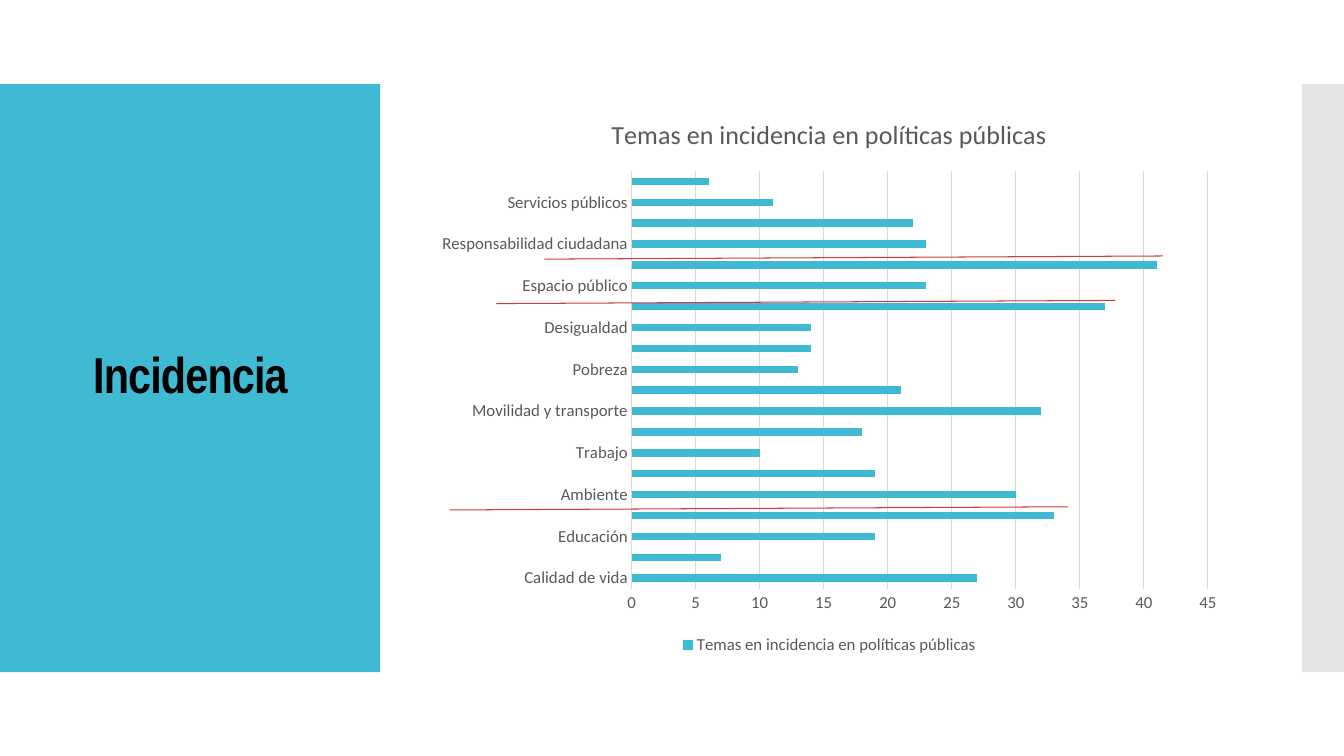
from lxml.etree import SubElement
from pptx import Presentation
from pptx.chart.data import CategoryChartData
from pptx.dml.color import RGBColor
from pptx.enum.chart import XL_CHART_TYPE, XL_LEGEND_POSITION, XL_TICK_MARK
from pptx.enum.shapes import MSO_CONNECTOR, MSO_SHAPE
from pptx.enum.text import MSO_ANCHOR, MSO_AUTO_SIZE, PP_ALIGN
from pptx.oxml.ns import qn
from pptx.util import Cm, Pt

COLORS = {
    "teal": "40BAD2",
    "side": "C8C8C8",
    "black": "000000",
    "label": "595959",
    "grid": "D9D9D9",
    "mark": "D5393D",
}
CHART_TITLE = "Temas en incidencia en políticas públicas"
TOPIC_PAIRS = [
    ("Calidad de vida", 27, 7),
    ("Educación", 19, 33),
    ("Ambiente", 30, 19),
    ("Trabajo", 10, 18),
    ("Movilidad y transporte", 32, 21),
    ("Pobreza", 13, 14),
    ("Desigualdad", 14, 37),
    ("Espacio público", 23, 41),
    ("Responsabilidad ciudadana", 23, 22),
    ("Servicios públicos", 11, 6),
]
MARK_STARTS = [(13.72, 6.53), (12.51, 7.65), (11.33, 12.85)]
MARK_WIDTH = 15.59
MARK_RISE = 0.08


def color(name):
    return RGBColor.from_string(COLORS[name])


def style_font(font, size, color_name, name="Calibri", bold=False):
    font.size = Pt(size)
    font.name = name
    font.bold = bold
    font.color.rgb = color(color_name)


def style_line(line, color_name):
    line.color.rgb = color(color_name)
    line.width = Pt(0.75)


def add_band(slide, left, width, color_name, opacity=100):
    band = slide.shapes.add_shape(
        MSO_SHAPE.RECTANGLE, Cm(left), Cm(2.12), Cm(width), Cm(14.82)
    )
    band.shadow.inherit = False
    band.fill.solid()
    band.fill.fore_color.rgb = color(color_name)
    band.line.fill.background()
    if opacity < 100:
        fill_color = band.element.spPr.find(qn("a:solidFill"))[0]
        SubElement(fill_color, qn("a:alpha"), val=str(opacity * 1000))
    slide.shapes.title.element.addprevious(band.element)


def format_title(title, text):
    title.left, title.top = Cm(0.71), Cm(3.12)
    title.width, title.height = Cm(8.18), Cm(12.78)
    frame = title.text_frame
    frame.word_wrap = True
    frame.auto_size = MSO_AUTO_SIZE.NONE
    frame.vertical_anchor = MSO_ANCHOR.MIDDLE
    paragraph = frame.paragraphs[0]
    paragraph.alignment = PP_ALIGN.CENTER
    paragraph.line_spacing = 0.9
    run = paragraph.add_run()
    run.text = text
    style_font(run.font, 36, "black", "Arial Narrow", True)
    for properties in title.element.iter(qn("a:rPr")):
        properties.set("spc", "-60")


def format_axis(axis):
    axis.major_tick_mark = XL_TICK_MARK.NONE
    axis.minor_tick_mark = XL_TICK_MARK.NONE
    style_font(axis.tick_labels.font, 12, "label")


def add_topics_chart(slide):
    data = CategoryChartData()
    data.categories = [label for topic, *counts in TOPIC_PAIRS for label in (topic, "")]
    data.add_series(
        CHART_TITLE, [count for topic, *counts in TOPIC_PAIRS for count in counts]
    )
    chart = slide.shapes.add_chart(
        XL_CHART_TYPE.BAR_CLUSTERED, Cm(10.74), Cm(2.39), Cm(20.32), Cm(14.22), data
    ).chart
    style_font(chart.font, 10, "black")

    chart.has_title = True
    run = chart.chart_title.text_frame.paragraphs[0].add_run()
    run.text = CHART_TITLE
    style_font(run.font, 18.6, "label")
    chart.chart_title.include_in_layout = False

    chart.has_legend = True
    chart.legend.position = XL_LEGEND_POSITION.BOTTOM
    chart.legend.include_in_layout = False
    style_font(chart.legend.font, 12, "label")

    format_axis(chart.category_axis)
    style_line(chart.category_axis.format.line, "grid")
    format_axis(chart.value_axis)
    chart.value_axis.format.line.fill.background()
    chart.value_axis.has_major_gridlines = True
    style_line(chart.value_axis.major_gridlines.format.line, "grid")

    plot = chart.plots[0]
    plot.gap_width = 182
    plot.vary_by_categories = False
    fill = plot.series[0].format.fill
    fill.solid()
    fill.fore_color.rgb = color("teal")


def add_mark(slide, left, top):
    mark = slide.shapes.add_connector(
        MSO_CONNECTOR.STRAIGHT,
        Cm(left),
        Cm(top),
        Cm(left + MARK_WIDTH),
        Cm(top - MARK_RISE),
    )
    style_line(mark.line, "mark")
    SubElement(mark.element.spPr, qn("a:effectLst"))


def main():
    presentation = Presentation()
    presentation.slide_width = Cm(33.87)
    presentation.slide_height = Cm(19.05)
    slide = presentation.slides.add_slide(presentation.slide_layouts[5])
    add_band(slide, 0, 9.58, "teal")
    add_band(slide, 32.81, 1.06, "side", 50)
    format_title(slide.shapes.title, "Incidencia")
    add_topics_chart(slide)
    for left, top in MARK_STARTS:
        add_mark(slide, left, top)
    presentation.save("out.pptx")


if __name__ == "__main__":
    main()
